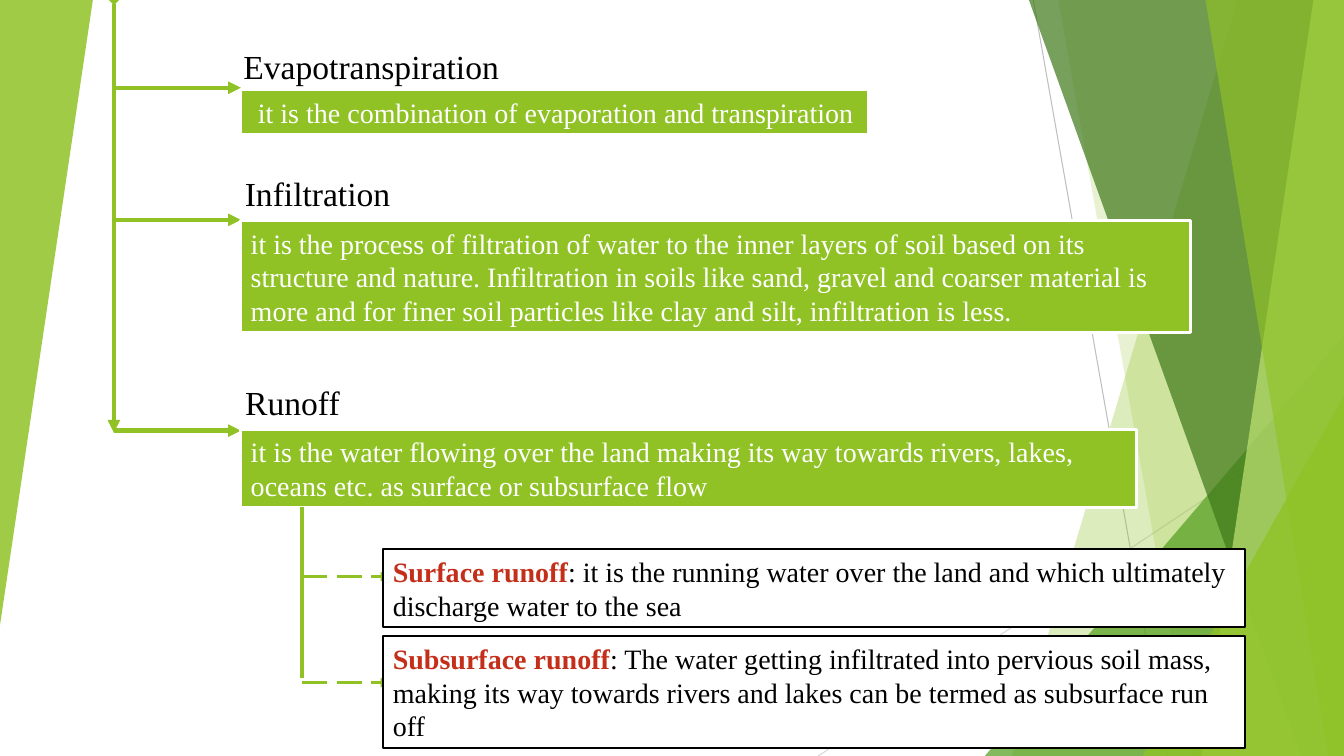
import pptx
import pptx.dml.color
import pptx.enum.dml
import pptx.enum.shapes
import pptx.enum.text
import pptx.oxml.ns
import pptx.util
from lxml import etree

Cm = pptx.util.Cm
Pt = pptx.util.Pt
qn = pptx.oxml.ns.qn
SHAPE = pptx.enum.shapes.MSO_SHAPE
ALIGN = pptx.enum.text.PP_ALIGN
ANCHOR = pptx.enum.text.MSO_ANCHOR

COLORS = {
    "lime": "90C226", "green": "54A021", "forest": "3F7819", "pale": "C0E474",
    "red": "C42F1A", "black": "000000", "white": "FFFFFF",
    "gray": "BFBFBF", "silver": "D9D9D9",
}
FONT = "Times New Roman"
WIDTH, HEIGHT = 33.87, 19.05

BACKDROP_LINES = [
    ((26.04, 0), (29.41, HEIGHT), "gray"),
    ((WIDTH, 10.24), (20.62, HEIGHT), "silver"),
]
BACKDROP = [
    ("facet", 31.19, 25.5, "lime", 30),
    ("facet", 26.67, 30.05, "lime", 20),
    ("corner", 24.82, 8.46, "green", 72),
    ("facet", 25.93, 32.79, "forest", 70),
    ("facet", 33.1, 30.28, "pale", 70),
    ("facet", 30.38, 33.48, "lime", 65),
    ("corner", 28.8, 9.98, "lime", 80),
]
PROCESSES = [
    {"name": "Evapotranspiration", "name_at": (5.28, 1.02, 8.15, 1.27),
     "arrow": 2.21, "top": 2.26, "width": 15.82, "height": 1.12, "inset": 0.43,
     "text": "it is the combination of evaporation and transpiration"},
    {"name": "Infiltration", "name_at": (5.54, 4.24, 4.93, 1.27),
     "arrow": 5.54, "top": 5.56, "width": 23.93, "height": 2.82, "inset": 0.25,
     "text": "it is the process of filtration of water to the inner layers of soil "
             "based on its structure and nature. Infiltration in soils like sand, "
             "gravel and coarser material is more and for finer soil particles like "
             "clay and silt, infiltration is less."},
    {"name": "Runoff", "name_at": (5.54, 9.5, 3.66, 1.27),
     "arrow": 10.85, "top": 10.82, "width": 22.58, "height": 1.96, "inset": 0.25,
     "text": "it is the water flowing over the land making its way towards rivers, "
             "lakes, oceans etc. as surface or subsurface flow"},
]
RUNOFF_KINDS = [
    ("Surface runoff", ": it is the running water over the land and which ultimately "
     "discharge water to the sea", 14.53, 13.84, 1.96),
    ("Subsurface runoff", ": The water getting infiltrated into pervious soil mass, "
     "making its way towards rivers and lakes can be termed as subsurface run off",
     17.2, 16.03, 2.82),
]
TRUNK_X, PROCESS_X = 2.87, 6.07
BRANCH_X, KIND_X, KIND_WIDTH = 7.62, 9.65, 21.72

deck = pptx.Presentation()
deck.slide_width, deck.slide_height = Cm(WIDTH), Cm(HEIGHT)
page = deck.slides.add_slide(deck.slide_layouts[6])


def rgb(name):
    return pptx.dml.color.RGBColor.from_string(COLORS[name])


def add_line(start, end, color, width, head=None, tail=None, dashed=False):
    line = page.shapes.add_connector(
        pptx.enum.shapes.MSO_CONNECTOR.STRAIGHT,
        *(Cm(value) for value in (*start, *end)))
    line.line.color.rgb = rgb(color)
    line.line.width = Pt(width)
    if dashed:
        line.line.dash_style = pptx.enum.dml.MSO_LINE.LONG_DASH
    properties = line._element.spPr
    for tag, kind in (("a:headEnd", head), ("a:tailEnd", tail)):
        if kind:
            etree.SubElement(properties.find(qn("a:ln")), qn(tag), type=kind)
    etree.SubElement(properties, qn("a:effectLst"))


def paint(shape, color, opacity):
    shape.shadow.inherit = False
    shape.fill.solid()
    shape.fill.fore_color.rgb = rgb(color)
    shape.line.fill.background()
    tint = next(shape._element.spPr.iter(qn("a:srgbClr")))
    etree.SubElement(tint, qn("a:alpha"), val=str(opacity * 1000))


def add_facet(top_x, bottom_x):
    builder = page.shapes.build_freeform(Cm(top_x), 0)
    builder.add_line_segments([
        (Cm(WIDTH), 0), (Cm(WIDTH), Cm(HEIGHT)), (Cm(bottom_x), Cm(HEIGHT))])
    return builder.convert_to_shape()


def add_corner(left, top, width, height):
    corner = page.shapes.add_shape(
        SHAPE.ISOSCELES_TRIANGLE, Cm(left), Cm(top), Cm(width), Cm(height))
    corner.adjustments[0] = 1
    return corner


def write(box, runs, size, align):
    frame = box.text_frame
    frame.word_wrap = True
    para = frame.paragraphs[0]
    para.alignment = align
    for text, color, bold in runs:
        span = para.add_run()
        span.text = text
        span.font.name = FONT
        span.font.size = Pt(size)
        span.font.bold = bold
        span.font.color.rgb = rgb(color)


def add_box(left, top, width, height, fill, border, border_width, runs, inset=0.25):
    box = page.shapes.add_shape(
        SHAPE.RECTANGLE, Cm(left), Cm(top), Cm(width), Cm(height))
    box.shadow.inherit = False
    box.fill.solid()
    box.fill.fore_color.rgb = rgb(fill)
    box.line.color.rgb = rgb(border)
    box.line.width = Pt(border_width)
    box.text_frame.vertical_anchor = ANCHOR.MIDDLE
    box.text_frame.margin_left = Cm(inset)
    write(box, runs, 20, ALIGN.LEFT)


for start, end, color in BACKDROP_LINES:
    add_line(start, end, color, 0.75)
for kind, first, second, color, opacity in BACKDROP:
    if kind == "facet":
        shape = add_facet(first, second)
    else:
        shape = add_corner(first, second, WIDTH - first, HEIGHT - second)
    paint(shape, color, opacity)
left_wedge = add_corner(0, 0, 2.34, 15.75)
left_wedge.rotation = 180
paint(left_wedge, "lime", 85)

add_line((TRUNK_X, -0.03), (TRUNK_X, 10.9), "lime", 3, "diamond", "triangle")
for process in PROCESSES:
    heading = page.shapes.add_textbox(*(Cm(value) for value in process["name_at"]))
    write(heading, [(process["name"], "black", False)], 24, ALIGN.CENTER)
    add_line((PROCESS_X, process["arrow"]), (TRUNK_X, process["arrow"]),
             "lime", 3, head="triangle")
    add_box(PROCESS_X, process["top"], process["width"], process["height"],
            "lime", "white", 2, [(process["text"], "white", False)], process["inset"])

runoff = PROCESSES[-1]
add_line((BRANCH_X, runoff["top"] + runoff["height"]), (BRANCH_X, 17.09), "lime", 3)
for term, meaning, arrow_y, top, height in RUNOFF_KINDS:
    add_line((BRANCH_X, arrow_y), (9.83, arrow_y), "lime", 2.25,
             tail="triangle", dashed=True)
    add_box(KIND_X, top, KIND_WIDTH, height, "white", "black", 1.5,
            [(term, "red", True), (meaning, "black", False)])

deck.save("out.pptx")
